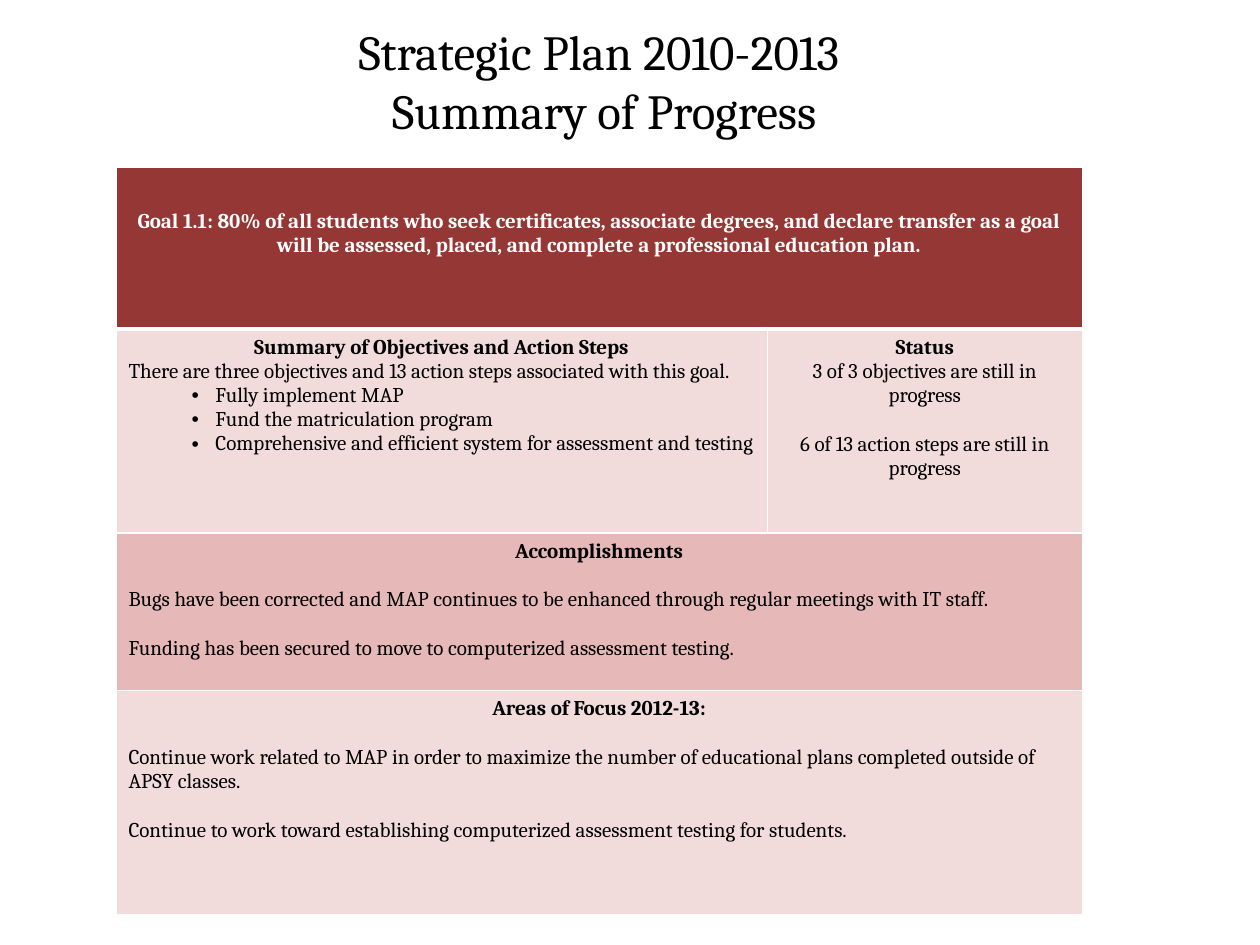
from dataclasses import dataclass

from lxml import etree
from pptx import Presentation
from pptx.dml.color import RGBColor
from pptx.enum.text import MSO_ANCHOR, PP_ALIGN
from pptx.oxml.ns import qn
from pptx.slide import Slide
from pptx.table import Table, _Cell
from pptx.text.text import _Paragraph
from pptx.util import Inches, Pt

LEFT, CENTER = PP_ALIGN.LEFT, PP_ALIGN.CENTER
MIDDLE, TOP = MSO_ANCHOR.MIDDLE, MSO_ANCHOR.TOP
TITLE_ONLY = 5


@dataclass(frozen=True)
class Theme:
    font: str = "Cambria"
    title_size: float = 28
    body_size: float = 12
    line_gap: float = 14
    black: str = "000000"
    white: str = "FFFFFF"
    goal_fill: str = "953735"
    light_fill: str = "F2DCDB"
    medium_fill: str = "E6B9B8"


THEME = Theme()


@dataclass(frozen=True)
class Line:
    text: str
    bold: bool = False
    align: PP_ALIGN = LEFT
    gap: bool = False
    bullet: bool = False
    color: str = THEME.black


@dataclass(frozen=True)
class CellContent:
    row: int
    column: int
    fill: str
    lines: tuple[Line, ...]
    full_width: bool = False
    top_margin: float = 0.05


def heading(text: str) -> Line:
    return Line(text, bold=True, align=CENTER)


COLUMN_WIDTHS = (5.17, 2.5)
ROW_HEIGHTS = (1.28, 1.62, 1.25, 1.78)
TITLE_LINES = ("Strategic Plan 2010-2013 ", "Summary of Progress")
CELLS = (
    CellContent(0, 0, THEME.goal_fill, (
        Line("Goal 1.1: 80% of all students who seek certificates, associate degrees, "
             "and declare transfer as a goal will be assessed, placed, and complete "
             "a professional education plan.",
             bold=True, align=CENTER, color=THEME.white),
    ), full_width=True, top_margin=0.33),
    CellContent(1, 0, THEME.light_fill, (
        heading("Summary of Objectives and Action Steps"),
        Line("There are three objectives and 13 action steps associated with this goal."),
        Line("Fully implement MAP", bullet=True),
        Line("Fund the matriculation program", bullet=True),
        Line("Comprehensive and efficient system for assessment and testing", bullet=True),
    )),
    CellContent(1, 1, THEME.light_fill, (
        heading("Status"),
        Line("3 of 3 objectives are still in progress", align=CENTER),
        Line("6 of 13 action steps are still in progress", align=CENTER, gap=True),
    )),
    CellContent(2, 0, THEME.medium_fill, (
        heading("Accomplishments"),
        Line("Bugs have been corrected and MAP continues to be enhanced through "
             "regular meetings with IT staff.", gap=True),
        Line("Funding has been secured to move to computerized assessment testing.", gap=True),
    ), full_width=True),
    CellContent(3, 0, THEME.light_fill, (
        heading("Areas of Focus 2012-13:"),
        Line("Continue work related to MAP in order to maximize the number of "
             "educational plans completed outside of APSY classes.", gap=True),
        Line("Continue to work toward establishing computerized assessment testing "
             "for students.", gap=True),
    ), full_width=True),
)


def write_text(paragraph: _Paragraph, text: str, *, size: float = THEME.body_size,
               color: str = THEME.black, bold: bool = False,
               align: PP_ALIGN = LEFT, space_before: float = 0) -> None:
    paragraph.alignment = align
    paragraph.space_before = Pt(space_before)
    run = paragraph.add_run()
    run.text = text
    run.font.name = THEME.font
    run.font.size = Pt(size)
    run.font.bold = bold
    run.font.color.rgb = RGBColor.from_string(color)


def add_bullet(paragraph: _Paragraph) -> None:
    properties = paragraph._p.get_or_add_pPr()
    properties.set("lvl", "1")
    properties.set("marL", str(Inches(0.69)))
    properties.set("indent", str(Inches(-0.19)))
    etree.SubElement(properties, qn("a:buFont"), typeface="Arial")
    etree.SubElement(properties, qn("a:buChar"), char="•")


def set_borders(cell: _Cell, bottom_width: float) -> None:
    """Draw white borders; call before the fill, which must follow them in the XML."""
    properties = cell._tc.get_or_add_tcPr()
    for side, width in (("L", 1), ("R", 1), ("T", 1), ("B", bottom_width)):
        border = etree.SubElement(properties, qn(f"a:ln{side}"), w=str(Pt(width)))
        fill = etree.SubElement(border, qn("a:solidFill"))
        etree.SubElement(fill, qn("a:srgbClr"), val=THEME.white)


def fill_cell(table: Table, content: CellContent) -> None:
    cell = table.cell(content.row, content.column)
    if content.full_width:
        cell.merge(table.cell(content.row, len(COLUMN_WIDTHS) - 1))
    cell.margin_top = Inches(content.top_margin)
    cell.vertical_anchor = TOP
    cell.fill.solid()
    cell.fill.fore_color.rgb = RGBColor.from_string(content.fill)
    frame = cell.text_frame
    for index, line in enumerate(content.lines):
        paragraph = frame.add_paragraph() if index else frame.paragraphs[0]
        if line.bullet:
            add_bullet(paragraph)
        write_text(paragraph, line.text, color=line.color, bold=line.bold,
                   align=line.align, space_before=THEME.line_gap if line.gap else 0)


def add_title(slide: Slide) -> None:
    title = slide.shapes.title
    title.left, title.top = Inches(0.67), Inches(0)
    title.width, title.height = Inches(8.25), Inches(1.28)
    frame = title.text_frame
    frame.vertical_anchor = MIDDLE
    for index, text in enumerate(TITLE_LINES):
        paragraph = frame.add_paragraph() if index else frame.paragraphs[0]
        write_text(paragraph, text, size=THEME.title_size, align=CENTER)


def add_goal_table(slide: Slide) -> None:
    table = slide.shapes.add_table(
        len(ROW_HEIGHTS), len(COLUMN_WIDTHS), Inches(0.92), Inches(1.33),
        Inches(sum(COLUMN_WIDTHS)), Inches(sum(ROW_HEIGHTS))).table
    table.first_row = table.horz_banding = False
    for column, width in zip(table.columns, COLUMN_WIDTHS):
        column.width = Inches(width)
    for index, (row, height) in enumerate(zip(table.rows, ROW_HEIGHTS)):
        row.height = Inches(height)
        for cell in row.cells:
            set_borders(cell, bottom_width=1 if index else 3)
    for content in CELLS:
        fill_cell(table, content)


def main() -> None:
    presentation = Presentation()
    presentation.slide_width, presentation.slide_height = Inches(10), Inches(7.5)
    slide = presentation.slides.add_slide(presentation.slide_layouts[TITLE_ONLY])
    add_title(slide)
    add_goal_table(slide)
    presentation.save("out.pptx")


if __name__ == "__main__":
    main()
